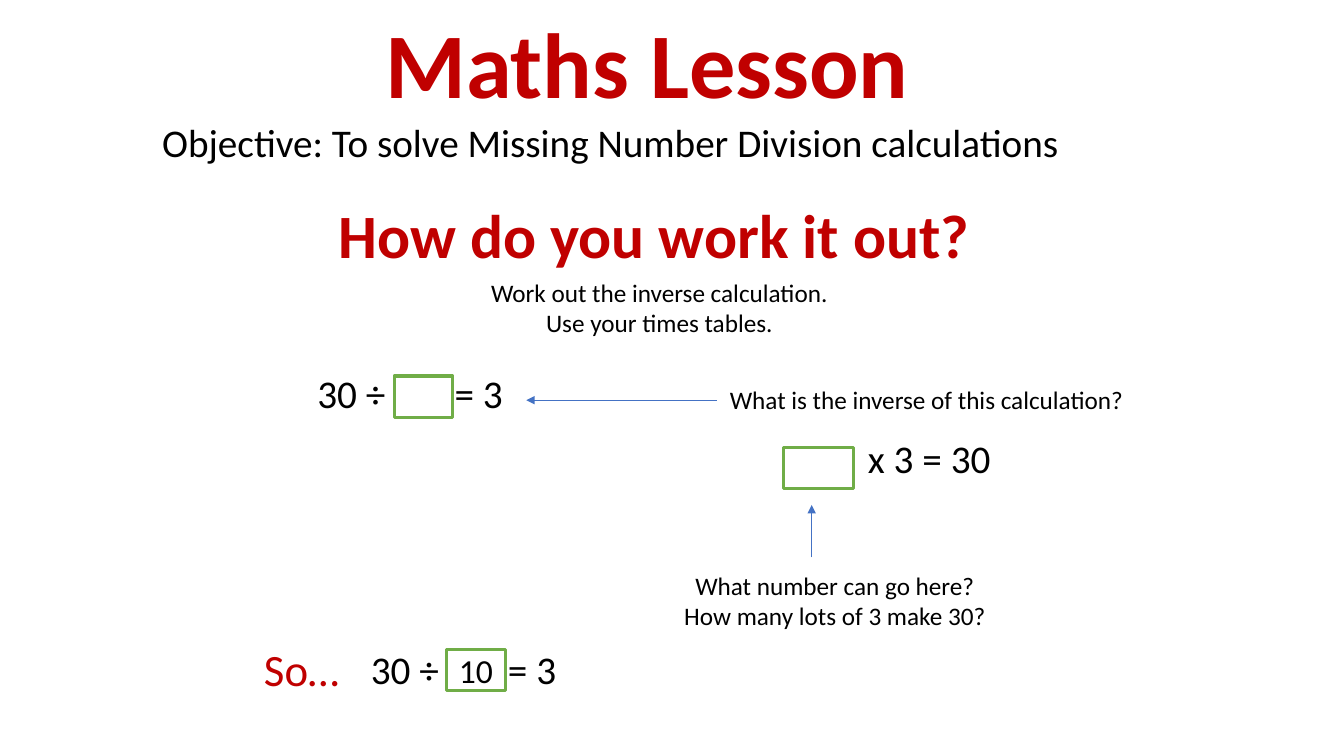
from lxml.etree import SubElement
from pptx import Presentation
from pptx.dml.color import RGBColor
from pptx.enum.shapes import MSO_CONNECTOR, MSO_SHAPE
from pptx.enum.text import MSO_ANCHOR, PP_ALIGN
from pptx.oxml.ns import qn
from pptx.util import Emu, Pt

EMU_PER_PX = 9144
RED, BLACK, WHITE, GREEN, BLUE = "C00000", "000000", "FFFFFF", "70AD47", "4472C4"


def px(length):
    """Turn px (100 to the inch) into EMU."""
    return Emu(length * EMU_PER_PX)


def color(hex_string):
    return RGBColor.from_string(hex_string)


class LessonPage:
    font_name = "Calibri"

    def __init__(self, deck):
        self.page = deck.slides.add_slide(deck.slide_layouts[6])

    def fill_text(self, frame, lines, size, ink, bold=False, centered=False, **paragraph_format):
        """Write one paragraph per line into a text frame."""
        paragraph_format["alignment"] = PP_ALIGN.CENTER if centered else PP_ALIGN.LEFT
        for index, line in enumerate(lines):
            para = frame.add_paragraph() if index else frame.paragraphs[0]
            for name, value in paragraph_format.items():
                setattr(para, name, value)
            span = para.add_run()
            span.text = line
            for name, value in {"name": self.font_name, "size": Pt(size), "bold": bold}.items():
                setattr(span.font, name, value)
            span.font.color.rgb = color(ink)

    def text(self, bounds, lines, size, ink=BLACK, wrap=False, anchor=MSO_ANCHOR.TOP, **style):
        box = self.page.shapes.add_textbox(*map(px, bounds))
        frame = box.text_frame
        frame.word_wrap = wrap
        frame.vertical_anchor = anchor
        self.fill_text(frame, lines, size, ink, **style)
        return box

    def division(self, left, top):
        """Write the division, with a tab stop leaving room for the number box."""
        box = self.text((left, top, 288, 88), ["30 ÷\t= 3"], 28, wrap=True)
        properties = box.text_frame.paragraphs[0]._p.get_or_add_pPr()
        stops = SubElement(properties, qn("a:tabLst"))
        SubElement(stops, qn("a:tab"), pos=str(px(136)), algn="l")

    def number_box(self, bounds, answer=None):
        box = self.page.shapes.add_shape(MSO_SHAPE.RECTANGLE, *map(px, bounds))
        box.shadow.inherit = False
        box.fill.solid()
        box.fill.fore_color.rgb = color(WHITE)
        box.line.color.rgb = color(GREEN)
        box.line.width = Pt(2.25)
        if answer:
            box.text_frame.vertical_anchor = MSO_ANCHOR.MIDDLE
            self.fill_text(box.text_frame, [answer], 24, BLACK, centered=True)

    def arrow(self, start, end):
        arrow = self.page.shapes.add_connector(MSO_CONNECTOR.STRAIGHT, *map(px, start + end))
        arrow.line.color.rgb = color(BLUE)
        arrow.line.width = Pt(0.5)
        SubElement(arrow.line._get_or_add_ln(), qn("a:tailEnd"), type="triangle")
        SubElement(arrow._element.spPr, qn("a:effectLst"))


def main():
    deck = Presentation()
    deck.slide_width, deck.slide_height = px(1333), px(750)
    lesson = LessonPage(deck)

    lesson.text((67, -4, 1150, 145), ["Maths Lesson"], 66, RED, wrap=True,
                anchor=MSO_ANCHOR.MIDDLE, bold=True, centered=True, line_spacing=0.9)
    lesson.text((151, 118, 1150, 62), ["Objective: To solve Missing Number Division calculations"],
                28, wrap=True, line_spacing=0.9, space_before=Pt(10))
    lesson.text((326, 190, 652, 84), ["How do you work it out?"], 44, RED, bold=True)
    lesson.text((475, 270, 358, 71),
                ["Work out the inverse calculation.", "Use your times tables."], 18, centered=True)

    lesson.division(305, 361)
    lesson.number_box((391, 373, 58, 41))
    lesson.arrow((711, 397), (522, 397))
    lesson.text((714, 376, 415, 71), ["What is the inverse of this calculation?"], 18)

    lesson.text((851, 426, 279, 88), ["x 3 = 30"], 28, wrap=True)
    lesson.number_box((777, 444, 70, 41))
    lesson.arrow((805, 553), (805, 501))
    lesson.text((667, 561, 322, 71),
                ["What number can go here?", "How many lots of 3 make 30?"], 18, centered=True)

    lesson.text((252, 632, 106, 64), ["So…"], 32, RED)
    lesson.division(358, 635)
    lesson.number_box((443, 644, 58, 41), "10")
    deck.save("out.pptx")


if __name__ == "__main__":
    main()
